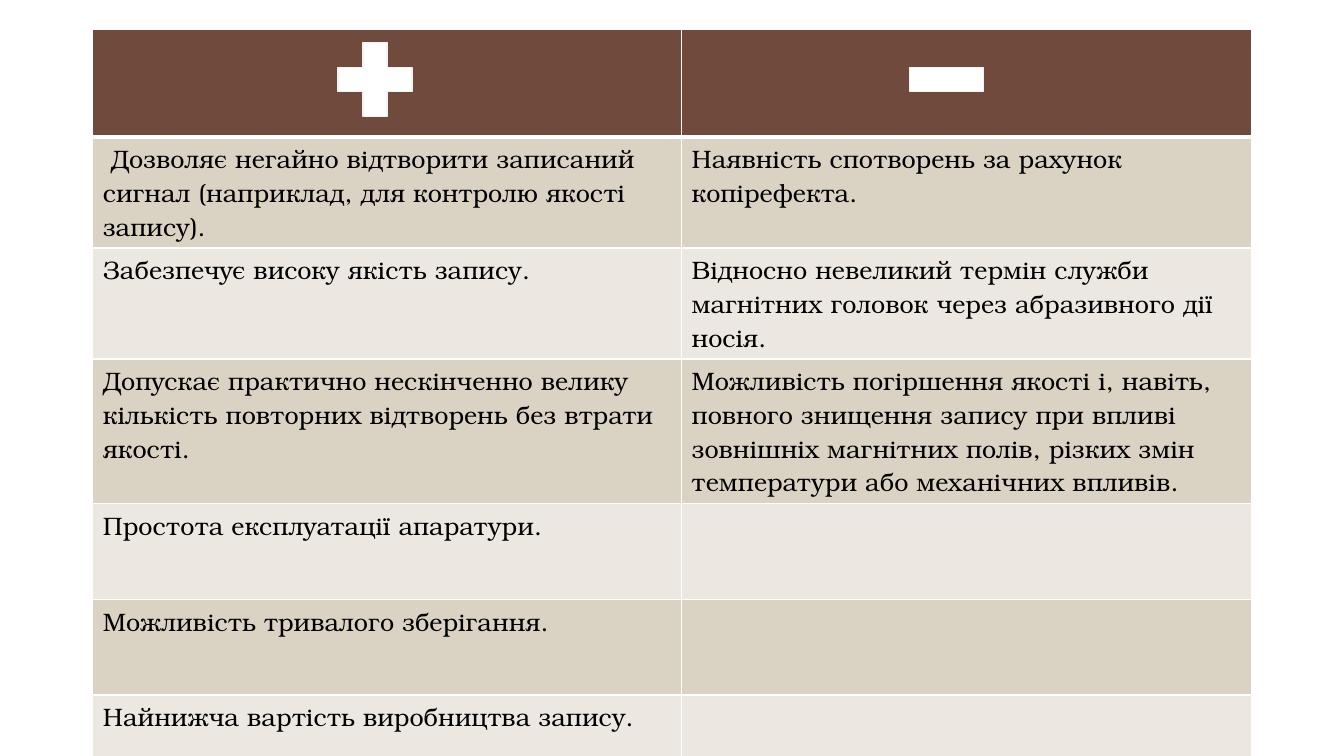
from lxml import etree
from pptx import Presentation
from pptx.dml.color import RGBColor
from pptx.enum import shapes
from pptx.oxml import ns
from pptx.util import Inches, Pt

WHITE = RGBColor(0xFF, 0xFF, 0xFF)
BLACK = RGBColor(0x00, 0x00, 0x00)
BROWN = RGBColor(0x70, 0x4A, 0x3D)
BEIGE = RGBColor(0xDA, 0xD2, 0xC3)
PALE = RGBColor(0xEC, 0xE8, 0xE1)
SIGN_EDGE = RGBColor(0xF2, 0xF2, 0xF2)

TEXT_FORMAT = {"name": "TeX Gyre Bonum", "size": Pt(18), "bold": False}

COLUMN_WIDTHS = [5.84, 5.65]
ROW_HEIGHTS = [1.07, 0.95, 0.95, 1.3, 0.95, 0.95, 0.95]
ROWS = [
    ("", ""),
    (" Дозволяє негайно відтворити записаний сигнал (наприклад, для контролю якості запису).",
     "Наявність спотворень за рахунок копірефекта."),
    ("Забезпечує високу якість запису.",
     "Відносно невеликий термін служби магнітних головок через абразивного дії носія."),
    ("Допускає практично нескінченно велику кількість повторних відтворень без втрати якості.",
     "Можливість погіршення якості і, навіть, повного знищення запису при впливі "
     "зовнішніх магнітних полів, різких змін температури або механічних впливів."),
    ("Простота експлуатації апаратури.", ""),
    ("Можливість тривалого зберігання.", ""),
    ("Найнижча вартість виробництва запису.", ""),
]


def add_border(cell, side, width):
    """Draw a white line on one side of a table cell."""
    properties = cell._tc.get_or_add_tcPr()
    line = etree.SubElement(properties, ns.qn(f"a:ln{side}"), w=str(Pt(width)))
    fill = etree.SubElement(line, ns.qn("a:solidFill"))
    etree.SubElement(fill, ns.qn("a:srgbClr"), val=str(WHITE))


presentation = Presentation()
presentation.slide_width = Inches(13.33)
presentation.slide_height = Inches(7.5)
slide = presentation.slides.add_slide(presentation.slide_layouts[6])

# Table of advantages and drawbacks
table = slide.shapes.add_table(
    len(ROWS), len(COLUMN_WIDTHS), Inches(0.92), Inches(0.29),
    Inches(sum(COLUMN_WIDTHS)), Inches(sum(ROW_HEIGHTS))).table
for column, width in zip(table.columns, COLUMN_WIDTHS):
    column.width = Inches(width)
for row, height in zip(table.rows, ROW_HEIGHTS):
    row.height = Inches(height)

for row_index, row_texts in enumerate(ROWS):
    if row_index == 0:
        row_color = BROWN
    else:
        row_color = BEIGE if row_index % 2 else PALE
    for column_index, cell_text in enumerate(row_texts):
        cell = table.cell(row_index, column_index)
        for side in "LRTB":
            under_header = (row_index, side) in [(0, "B"), (1, "T")]
            add_border(cell, side, 3 if under_header else 1)
        cell.fill.solid()
        cell.fill.fore_color.rgb = row_color
        cell.text = cell_text
        font = cell.text_frame.paragraphs[0].font
        for attribute, value in TEXT_FORMAT.items():
            setattr(font, attribute, value)
        font.color.rgb = BLACK

# Plus and minus signs in the header
for sign, left in [(shapes.MSO_SHAPE.MATH_PLUS, 3.22), (shapes.MSO_SHAPE.MATH_MINUS, 8.89)]:
    shape = slide.shapes.add_shape(sign, Inches(left), Inches(0.29), Inches(1), Inches(1))
    shape.shadow.inherit = False
    shape.fill.solid()
    shape.fill.fore_color.rgb = WHITE
    shape.line.color.rgb = SIGN_EDGE
    shape.line.width = Pt(1)

presentation.save("out.pptx")
